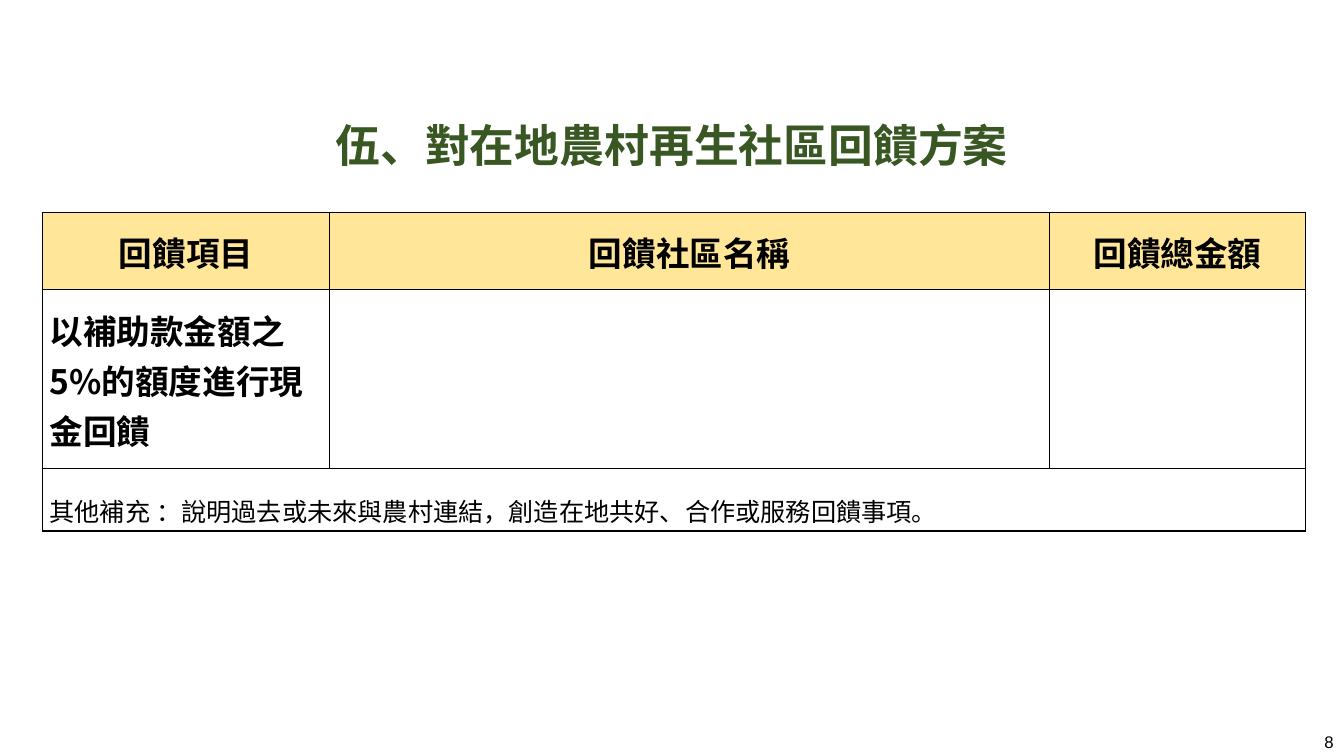
from lxml import etree
from pptx import Presentation
from pptx.dml.color import RGBColor
from pptx.enum.text import MSO_ANCHOR, PP_ALIGN
from pptx.oxml.ns import qn
from pptx.util import Cm, Pt

LEFT, CENTER, RIGHT = PP_ALIGN.LEFT, PP_ALIGN.CENTER, PP_ALIGN.RIGHT
MIDDLE = MSO_ANCHOR.MIDDLE
CJK = "Noto Sans CJK SC"


def rgb(value):
    return RGBColor.from_string(value)


def write(p, text, align, color="000000", **font):
    p.alignment = align
    r = p.add_run()
    r.text = text
    for name, value in font.items():
        setattr(r.font, name, value)
    r.font.color.rgb = rgb(color)
    etree.SubElement(r.font._element, qn("a:ea"), typeface=CJK)


prs = Presentation()
prs.slide_width, prs.slide_height = Cm(33.87), Cm(19.05)
s = prs.slides.add_slide(prs.slide_layouts[5])

title = s.shapes.title
title.left, title.top, title.width, title.height = Cm(0), Cm(2.84), Cm(33.87), Cm(1.63)
title.text_frame.vertical_anchor = MIDDLE
write(title.text_frame.paragraphs[0], "伍、對在地農村再生社區回饋方案", CENTER, "385723",
      size=Pt(32), bold=True, name=CJK)

col_widths = [7.24, 18.14, 6.45]
row_heights = [1.93, 4.52, 1.57]
table = s.shapes.add_table(3, 3, Cm(1.07), Cm(5.36),
                           Cm(sum(col_widths)), Cm(sum(row_heights))).table
for col, width in zip(table.columns, col_widths):
    col.width = Cm(width)
for row, height in zip(table.rows, row_heights):
    row.height = Cm(height)

for i, row in enumerate(table.rows):
    for cell in row.cells:
        cell.fill.solid()
        cell.fill.fore_color.rgb = rgb("FFE699" if i == 0 else "FFFFFF")
        cell.vertical_anchor = MIDDLE
        cell.margin_left = cell.margin_right = Cm(0.18)
        cell.margin_top = cell.margin_bottom = Cm(0)
        cell.text_frame.paragraphs[0].line_spacing = Pt(36)
        tcPr = cell._tc.get_or_add_tcPr()
        for k, side in enumerate(["lnL", "lnR", "lnT", "lnB"]):
            ln = etree.Element(qn(f"a:{side}"), w=str(Pt(1)))
            fill = etree.SubElement(ln, qn("a:solidFill"))
            etree.SubElement(fill, qn("a:srgbClr"), val="000000")
            tcPr.insert(k, ln)

table.cell(2, 0).merge(table.cell(2, 2))
table.cell(2, 0).margin_top = Cm(0.2)

heading = {"size": Pt(24), "bold": True, "name": "Arial"}
item = {"size": Pt(24), "bold": True, "name": CJK}
note = {"size": Pt(18), "bold": False, "name": "Arial"}
entries = [
    (0, 0, "回饋項目", CENTER, heading),
    (0, 1, "回饋社區名稱", CENTER, heading),
    (0, 2, "回饋總金額", CENTER, heading),
    (1, 0, "以補助款金額之5%的額度進行現金回饋", LEFT, item),
    (2, 0, "其他補充 ：說明過去或未來與農村連結，創造在地共好、合作或服務回饋事項。", LEFT, note),
]
for i, j, text, align, font in entries:
    write(table.cell(i, j).text_frame.paragraphs[0], text, align, **font)

number = s.shapes.add_textbox(Cm(26.24), Cm(18.36), Cm(7.62), Cm(0.69))
tf = number.text_frame
tf.word_wrap = True
tf.vertical_anchor = MIDDLE
write(tf.paragraphs[0], "8", RIGHT, size=Pt(12), name="Arial")

prs.save("out.pptx")
